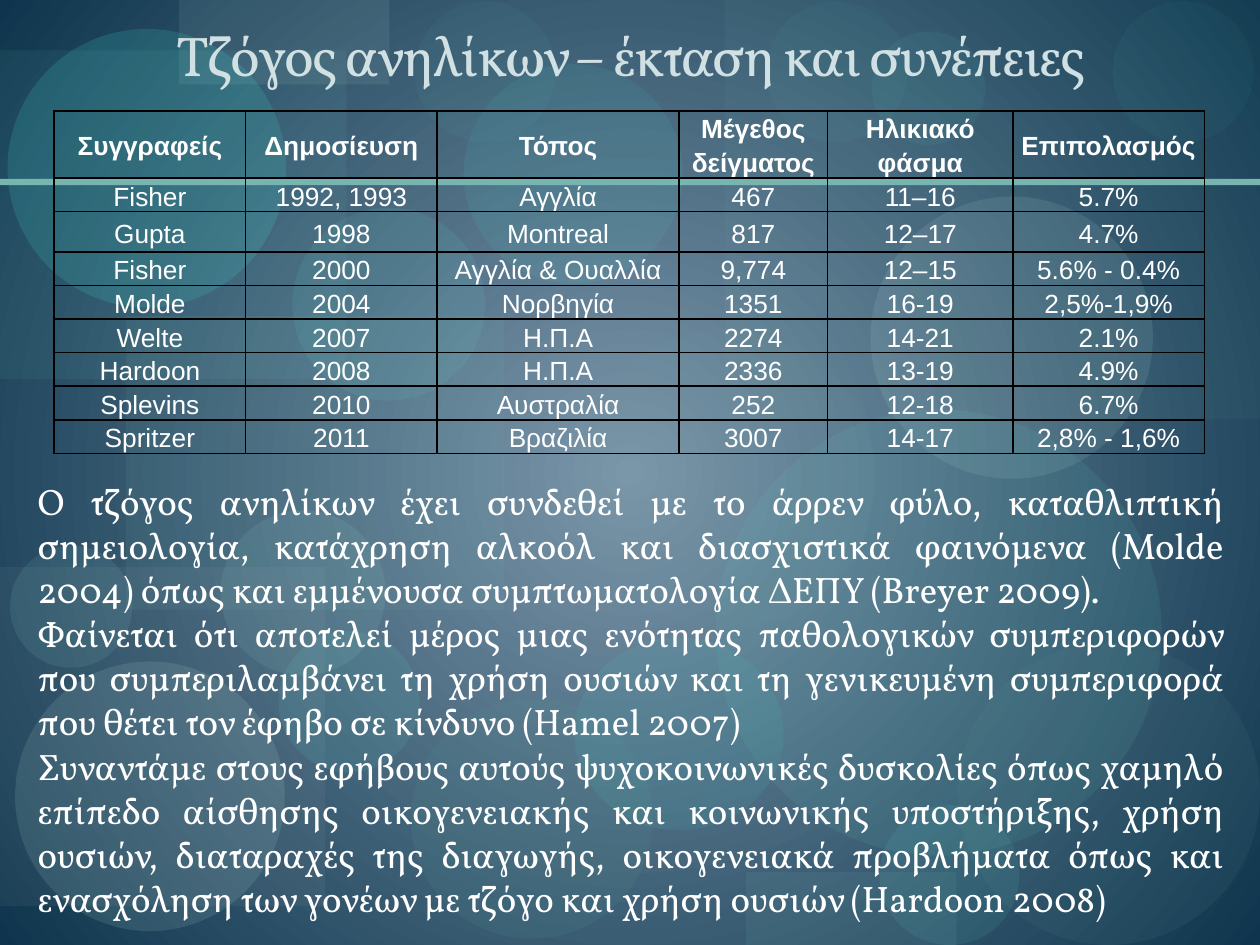
from lxml import etree
from pptx import Presentation
from pptx import util as u
from pptx.dml.color import RGBColor
from pptx.enum import shapes, text
from pptx.oxml.ns import qn

RECT, OVAL = shapes.MSO_SHAPE.RECTANGLE, shapes.MSO_SHAPE.OVAL
WHITE = "FFFFFF"

# preset, left, top, width, height, colour, opacity in percent
DECOR = [
    (RECT, 1, 2.51, 3, 2.33, "79B5B0", 9),
    (OVAL, 3.26, 5.55, 1.92, 1.9, "549791", 13),
    (RECT, 5.75, 0, 4.25, 3.33, "79B5B0", 6),
    (RECT, 0, 4.5, 2.58, 2.69, "B2B7BA", 8),
    (OVAL, 4.57, 2.61, 2.38, 2.38, "70A39E", 8),
    (OVAL, 6.98, 6.39, 1.11, 1.11, "65E8DC", 9),
    (OVAL, 6.91, 1.56, 2.24, 2.24, "C1E8E4", 11),
    (OVAL, 0.12, 5.25, 2.14, 2.14, "C1E8E4", 12),
    (OVAL, 2.21, 5.01, 1.12, 1.12, "65E8DC", 9),
    (OVAL, 4.56, 5.06, 1.66, 1.53, "44EADC", 8),
    (RECT, 0, 0.4, 2.75, 2.61, "77D6CE", 7),
    (RECT, 1.42, 0, 1.67, 0.67, "BED7D4", 10),
    (OVAL, 0.06, 0.23, 2.21, 2.21, "44EADC", 15),
    (OVAL, 0.08, 4.33, 0.97, 0.97, "97DCD6", 10),
    (OVAL, 2.32, 1.65, 1.53, 1.53, "65E8DC", 9),
    (OVAL, 3.68, 0.51, 1.74, 1.74, "44EADC", 8),
    (OVAL, 5.68, 3.25, 3.54, 3.54, "61CDC4", 10),
    (OVAL, 6.08, 0.01, 1.12, 1.12, "65E8DC", 4),
    (OVAL, 7.6, 5.1, 2.4, 2.4, "70A39E", 8),
    (OVAL, 1.75, 4.05, 1.31, 1.31, "97DCD6", 10),
    (OVAL, 6.92, 0.25, 0.9, 0.9, "65E8DC", 6),
    (OVAL, 8.83, 0.01, 1.12, 1.12, "65E8DC", 4),
    (RECT, 5.92, 6.92, 1.67, 0.58, "79B5B0", 10),
    (OVAL, 3.29, 0.01, 1.12, 1.12, "65E8DC", 4),
    (RECT, 0, 1.42, 10, 0.05, "79B5B0", 100),
]

COLS = [1.52, 1.52, 1.92, 1.18, 1.47, 1.52]
ROWS = [0.53, 0.26, 0.32] + [0.26] * 6
STUDIES = [
    ("Συγγραφείς", "Δημοσίευση", "Τόπος", "Μέγεθος δείγματος", "Ηλικιακό φάσμα", "Επιπολασμός"),
    ("Fisher", "1992, 1993", "Αγγλία", "467", "11–16", "5.7%"),
    ("Gupta", "1998", "Montreal", "817", "12–17", "4.7%"),
    ("Fisher", "2000", "Αγγλία & Ουαλλία", "9,774", "12–15", "5.6% - 0.4%"),
    ("Molde", "2004", "Νορβηγία", "1351", "16-19", "2,5%-1,9%"),
    ("Welte", "2007", "Η.Π.Α", "2274", "14-21", "2.1%"),
    ("Hardoon", "2008", "Η.Π.Α", "2336", "13-19", "4.9%"),
    ("Splevins", "2010", "Αυστραλία", "252", "12-18", "6.7%"),
    ("Spritzer", "2011", "Βραζιλία", "3007", "14-17", "2,8% - 1,6%"),
]

FINDINGS = [
    "Ο τζόγος ανηλίκων έχει συνδεθεί με το άρρεν φύλο, καταθλιπτική σημειολογία, κατάχρηση "
    "αλκοόλ και διασχιστικά φαινόμενα (Molde 2004) όπως και εμμένουσα συμπτωματολογία ΔΕΠΥ "
    "(Breyer 2009).",
    "Φαίνεται ότι αποτελεί μέρος μιας ενότητας παθολογικών συμπεριφορών που συμπεριλαμβάνει "
    "τη χρήση ουσιών και τη γενικευμένη συμπεριφορά που θέτει τον έφηβο σε κίνδυνο (Hamel 2007)",
    "Συναντάμε στους εφήβους αυτούς ψυχοκοινωνικές δυσκολίες όπως χαμηλό επίπεδο αίσθησης "
    "οικογενειακής και κοινωνικής υποστήριξης, χρήση ουσιών, διαταραχές της διαγωγής, "
    "οικογενειακά προβλήματα όπως και ενασχόληση των γονέων με τζόγο και χρήση ουσιών "
    "(Hardoon 2008)",
]


def rgb(value):
    return RGBColor.from_string(value)


def set_all(obj, **values):
    for name, value in values.items():
        setattr(obj, name, value)


def write(p, content, align, size, font, color, bold=False):
    p.alignment = align
    r = p.add_run()
    r.text = content
    set_all(r.font, size=u.Pt(size), name=font, bold=bold)
    r.font.color.rgb = rgb(color)
    return r


def paint_background(s):
    """Radial gradient, light in the centre."""
    fill = s.background.fill
    fill.gradient()
    for stop, color in zip(fill.gradient_stops, ("7B96AA", "0E354D")):
        stop.color.rgb = rgb(color)
    lin = s.element.xpath(".//p:bg//a:lin")[0]
    radial = etree.Element(qn("a:path"), path="circle")
    etree.SubElement(radial, qn("a:fillToRect"), {side: "50000" for side in "ltrb"})
    lin.getparent().replace(lin, radial)


def add_decor(s):
    for preset, *box, color, opacity in DECOR:
        sp = s.shapes.add_shape(preset, *map(u.Inches, box))
        sp.shadow.inherit = False
        sp.line.fill.background()
        sp.fill.solid()
        sp.fill.fore_color.rgb = rgb(color)
        if opacity < 100:
            clr = sp.element.spPr.find(".//" + qn("a:srgbClr"))
            etree.SubElement(clr, qn("a:alpha"), val=str(opacity * 1000))


def place_title(s, left, top, width, height):
    title = s.shapes.title
    title.element.getparent().append(title.element)  # in front of the decor
    set_all(title, left=u.Inches(left), top=u.Inches(top),
            width=u.Inches(width), height=u.Inches(height))
    tf = title.text_frame
    set_all(tf, vertical_anchor=text.MSO_ANCHOR.BOTTOM, auto_size=text.MSO_AUTO_SIZE.NONE,
            word_wrap=True)
    r = write(tf.paragraphs[0], "Τζόγος ανηλίκων – έκταση και συνέπειες",
              text.PP_ALIGN.CENTER, 32, "Vollkorn", "D1E1E3")
    r.font._element.set("spc", "-100")


def add_borders(cell, color="000000", width=1):
    tc_pr = cell._tc.get_or_add_tcPr()
    for i, side in enumerate("LRTB"):
        ln = etree.Element(qn("a:ln" + side), w=str(u.Pt(width)))
        fill = etree.SubElement(ln, qn("a:solidFill"))
        etree.SubElement(fill, qn("a:srgbClr"), val=color)
        tc_pr.insert(i, ln)


def add_studies(s, left, top):
    table = s.shapes.add_table(len(ROWS), len(COLS), u.Inches(left), u.Inches(top),
                               u.Inches(sum(COLS)), u.Inches(sum(ROWS))).table
    set_all(table, first_row=False, horz_banding=False)
    for col, width in zip(table.columns, COLS):
        col.width = u.Inches(width)
    for i, (row, height, values) in enumerate(zip(table.rows, ROWS, STUDIES)):
        row.height = u.Inches(height)
        for cell, value in zip(row.cells, values):
            set_all(cell, vertical_anchor=text.MSO_ANCHOR.MIDDLE, margin_top=0, margin_bottom=0,
                    margin_left=u.Inches(0.06), margin_right=u.Inches(0.06))
            cell.fill.background()
            add_borders(cell)
            p = cell.text_frame.paragraphs[0]
            p.line_spacing = 1.15
            write(p, value, text.PP_ALIGN.CENTER, 15, "Arial", WHITE, bold=i == 0)


def add_findings(s, left, top, width, height):
    tf = s.shapes.add_textbox(*map(u.Inches, (left, top, width, height))).text_frame
    set_all(tf, word_wrap=True, auto_size=text.MSO_AUTO_SIZE.SHAPE_TO_FIT_TEXT)
    for i, finding in enumerate(FINDINGS):
        p = tf.add_paragraph() if i else tf.paragraphs[0]
        write(p, finding, text.PP_ALIGN.JUSTIFY, 21, "Vollkorn", WHITE)


def main():
    prs = Presentation()
    set_all(prs, slide_width=u.Inches(10), slide_height=u.Inches(7.5))
    s = prs.slides.add_slide(prs.slide_layouts[5])
    paint_background(s)
    add_decor(s)
    place_title(s, 0.51, 0.14, 9, 0.61)
    add_studies(s, 0.43, 0.88)
    add_findings(s, 0.2, 3.75, 9.61, 3.64)
    prs.save("out.pptx")


if __name__ == "__main__":
    main()
